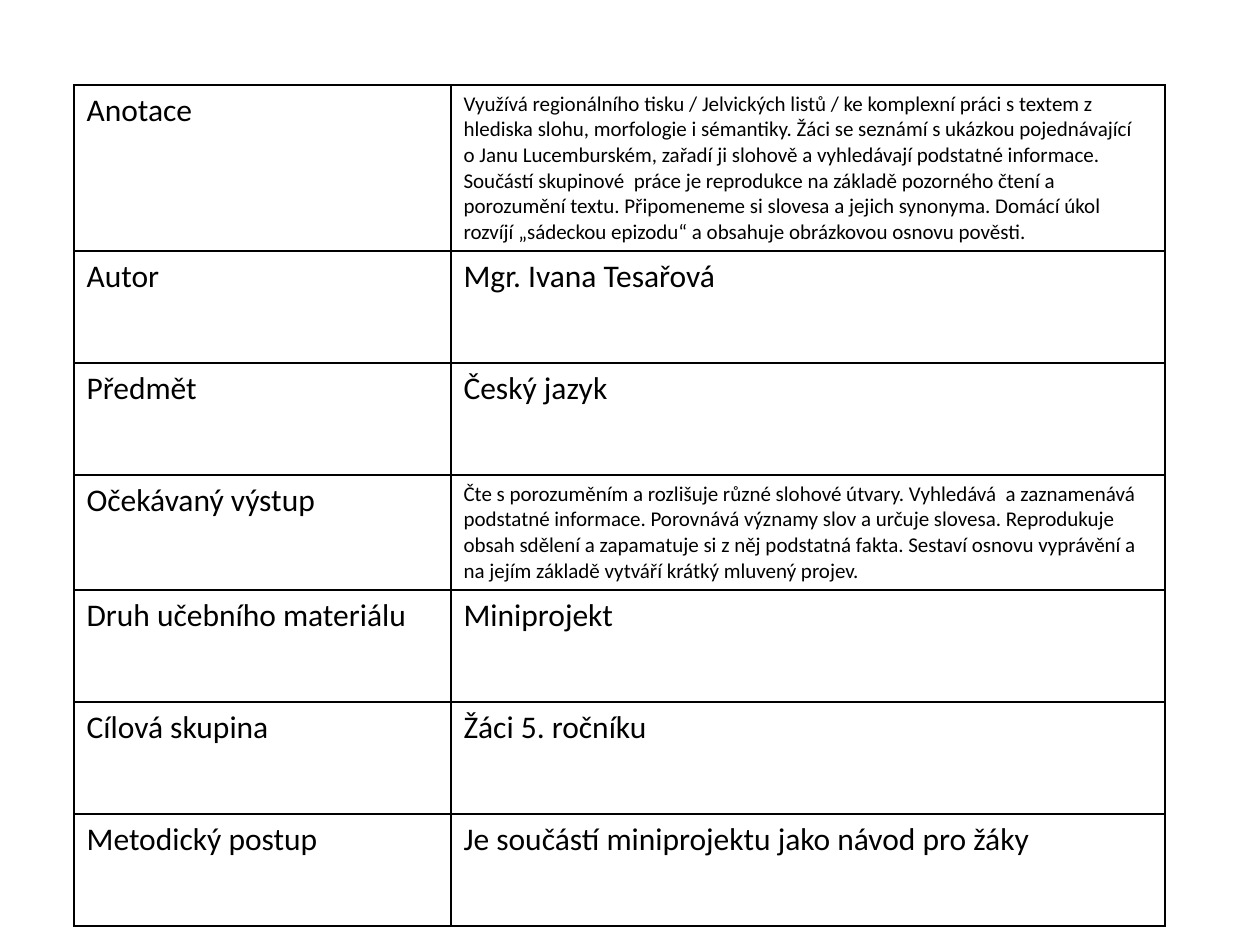
"""Builds a slide with a table describing a teaching material."""
from typing import NamedTuple

from lxml import etree
from pptx import Presentation, util as u
from pptx.dml.color import RGBColor
from pptx.oxml import ns

BLACK = RGBColor(0, 0, 0)
PX_PER_INCH = 126
SLIDE_SIZE = (1260, 945)
TABLE_LEFT, TABLE_TOP = 74, 85
COLUMN_WIDTHS = (377, 714)
ROW_HEIGHT = 112
LARGE, SMALL = 18, 12


class Entry(NamedTuple):
    label: str
    value: str
    size: int = LARGE


ENTRIES = [
    Entry(
        "Anotace",
        "Využívá regionálního tisku / Jelvických listů / ke komplexní práci s textem z "
        "hlediska slohu, morfologie i sémantiky. Žáci se seznámí s ukázkou pojednávající  "
        "o Janu Lucemburském, zařadí ji slohově a vyhledávají podstatné informace. "
        "Součástí skupinové  práce je reprodukce na základě pozorného čtení a "
        "porozumění textu. Připomeneme si slovesa a jejich synonyma. Domácí úkol "
        "rozvíjí „sádeckou epizodu“ a obsahuje obrázkovou osnovu pověsti.",
        SMALL,
    ),
    Entry("Autor", "Mgr. Ivana Tesařová"),
    Entry("Předmět", "Český jazyk"),
    Entry(
        "Očekávaný výstup",
        "Čte s porozuměním a rozlišuje různé slohové útvary. Vyhledává  a zaznamenává "
        "podstatné informace. Porovnává významy slov a určuje slovesa. Reprodukuje "
        "obsah sdělení a zapamatuje si z něj podstatná fakta. Sestaví osnovu vyprávění a "
        "na jejím základě vytváří krátký mluvený projev.",
        SMALL,
    ),
    Entry("Druh učebního materiálu", "Miniprojekt"),
    Entry("Cílová skupina", "Žáci 5. ročníku"),
    Entry("Metodický postup", "Je součástí miniprojektu jako návod pro žáky"),
]


def px(length: int) -> int:
    """Turn pixels into EMU."""
    return round(length * u.Inches(1) / PX_PER_INCH)


def add_borders(cell) -> None:
    """Draw a thin black line on every side of a cell."""
    properties = cell._tc.get_or_add_tcPr()
    for index, side in enumerate(("lnL", "lnR", "lnT", "lnB")):
        line = etree.Element(ns.qn(f"a:{side}"), w=str(u.Pt(1)))
        fill = etree.SubElement(line, ns.qn("a:solidFill"))
        etree.SubElement(fill, ns.qn("a:srgbClr"), val=str(BLACK))
        properties.insert(index, line)


def fill_cell(cell, words: str, size: int) -> None:
    """Write the words into a cell and give it its look."""
    cell.fill.background()
    add_borders(cell)
    span = cell.text_frame.paragraphs[0].add_run()
    span.text = words
    span.font.color.rgb = BLACK
    for name, value in {"name": "Calibri", "size": u.Pt(size), "bold": False}.items():
        setattr(span.font, name, value)


def add_entry_table(page, entries: list[Entry]) -> None:
    """Add the table with one row for each entry."""
    frame = page.shapes.add_table(
        len(entries), len(COLUMN_WIDTHS), px(TABLE_LEFT), px(TABLE_TOP),
        px(sum(COLUMN_WIDTHS)), px(ROW_HEIGHT * len(entries)),
    )
    table = frame.table
    table.first_row = table.horz_banding = False
    for column, width in zip(table.columns, COLUMN_WIDTHS):
        column.width = px(width)
    for row, entry in zip(table.rows, entries):
        row.height = px(ROW_HEIGHT)
        fill_cell(row.cells[0], entry.label, LARGE)
        fill_cell(row.cells[1], entry.value, entry.size)


def main() -> None:
    """Build and save the deck."""
    deck = Presentation()
    deck.slide_width, deck.slide_height = map(px, SLIDE_SIZE)
    page = deck.slides.add_slide(deck.slide_layouts.get_by_name("Blank"))
    add_entry_table(page, ENTRIES)
    deck.save("out.pptx")


if __name__ == "__main__":
    main()
